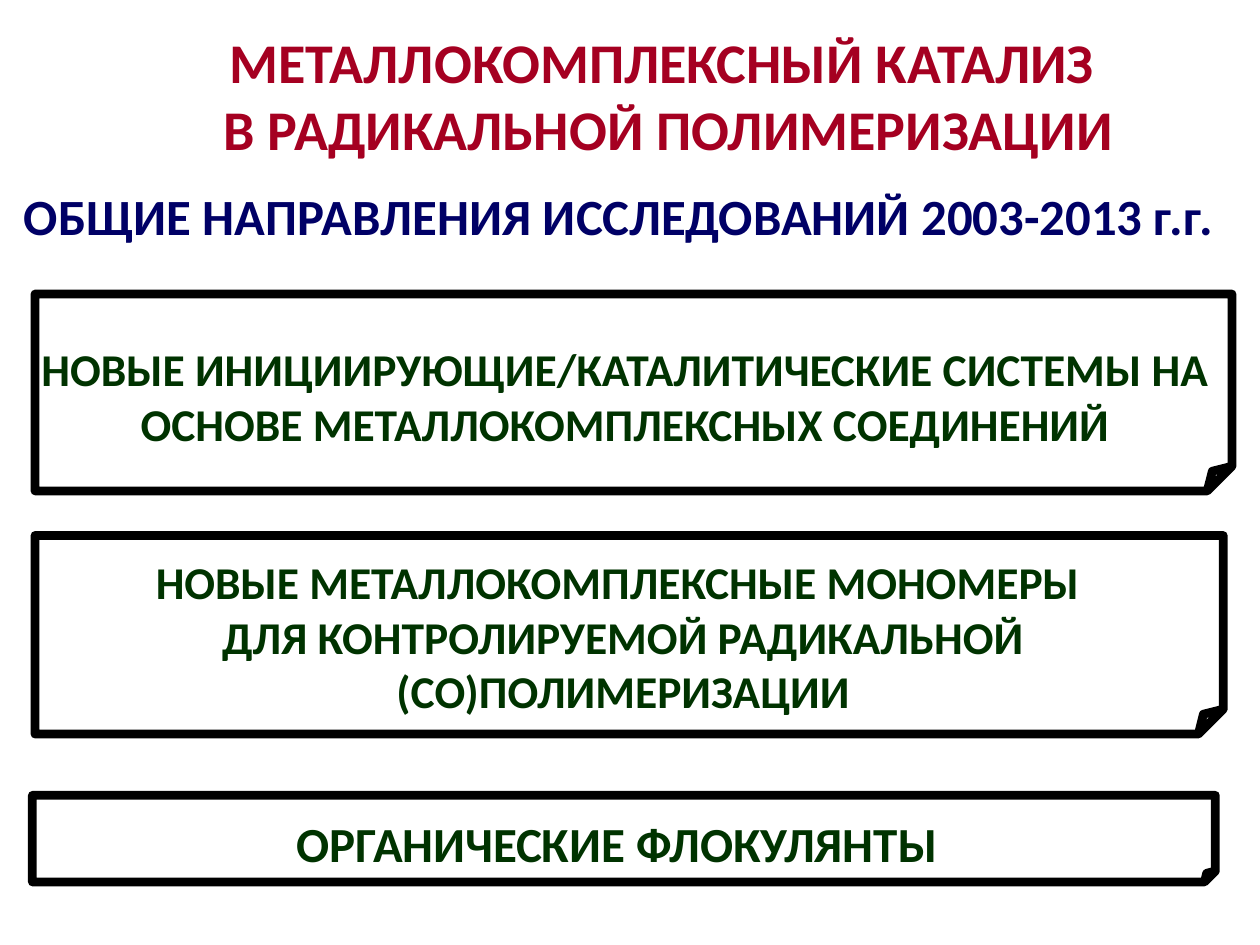
"""Build a slide with two headings and three framed research directions."""
from lxml import etree
from pptx import Presentation, util as u
from pptx.dml.color import RGBColor
from pptx.enum import shapes, text
from pptx.oxml import ns, parse_xml

Pt = u.Pt
SHADOW = (
    f'<a:effectLst {ns.nsdecls("a")}><a:outerShdw blurRad="38100" dist="76200" dir="2700000">'
    '<a:srgbClr val="CCCC99"><a:alpha val="45000"/></a:srgbClr></a:outerShdw></a:effectLst>'
)


def rgb(value):
    return RGBColor.from_string(value)


def add_text(box, lines, size, color, align, wrap=True, shadow=False):
    sp = s.shapes.add_textbox(*[Pt(v) for v in box])
    tf = sp.text_frame
    tf.word_wrap = wrap
    tf.auto_size = text.MSO_AUTO_SIZE.SHAPE_TO_FIT_TEXT
    tf.text = "\n".join(lines)
    for p in tf.paragraphs:
        p.alignment = align
        r = p.runs[0]
        r.font.size, r.font.bold = Pt(size), True
        r.font.color.rgb = rgb(color)
        if shadow:
            r.font.fill._xPr.find(ns.qn("a:solidFill")).addnext(parse_xml(SHADOW))
        r.font.name = "Calibri"


prs = Presentation()
prs.slide_width, prs.slide_height = Pt(720), Pt(540)
s = prs.slides.add_slide(prs.slide_layouts[6])
s.background.fill.solid()
s.background.fill.fore_color.rgb = rgb("FFFFFF")
CENTER, LEFT = text.PP_ALIGN.CENTER, text.PP_ALIGN.LEFT

directions = [
    ((20, 168, 684, 112.5), (6.5, 191.5, 702, 65), 26,
     ["НОВЫЕ ИНИЦИИРУЮЩИЕ/КАТАЛИТИЧЕСКИЕ СИСТЕМЫ НА ОСНОВЕ МЕТАЛЛОКОМПЛЕКСНЫХ СОЕДИНЕНИЙ"]),
    ((20, 306, 679, 113.5), (21.5, 313, 669.5, 101.5), 26,
     ["НОВЫЕ МЕТАЛЛОКОМПЛЕКСНЫЕ МОНОМЕРЫ ",
      "ДЛЯ КОНТРОЛИРУЕМОЙ РАДИКАЛЬНОЙ (СО)ПОЛИМЕРИЗАЦИИ"]),
    ((18.5, 454.5, 676, 49.5), (18, 461.5, 669, 41), 28,
     ["ОРГАНИЧЕСКИЕ ФЛОКУЛЯНТЫ"]),
]
for frame, box, size, lines in directions:
    sp = s.shapes.add_shape(shapes.MSO_SHAPE.FOLDED_CORNER, *[Pt(v) for v in frame])
    fold = sp._element.spPr.find(ns.qn("a:prstGeom")).get_or_add_avLst()
    etree.SubElement(fold, ns.qn("a:gd"), name="adj", fmla="val 12500")
    sp.shadow.inherit = False
    sp.fill.solid()
    sp.fill.fore_color.rgb = rgb("FFFFFF")
    sp.line.color.rgb = rgb("000000")
    sp.line.width = Pt(5)
    etree.SubElement(sp.line._get_or_add_ln(), ns.qn("a:round"))
    add_text(box, lines, size, "003300", CENTER)

add_text((6.5, 102, 698.5, 44), ["ОБЩИЕ НАПРАВЛЕНИЯ ИССЛЕДОВАНИЙ 2003-2013 г.г."],
         29, "000066", LEFT, shadow=True)
add_text((118, 12, 528, 85), ["МЕТАЛЛОКОМПЛЕКСНЫЙ КАТАЛИЗ ", "В РАДИКАЛЬНОЙ ПОЛИМЕРИЗАЦИИ"],
         32, "A50021", CENTER, wrap=False, shadow=True)

prs.save("out.pptx")
